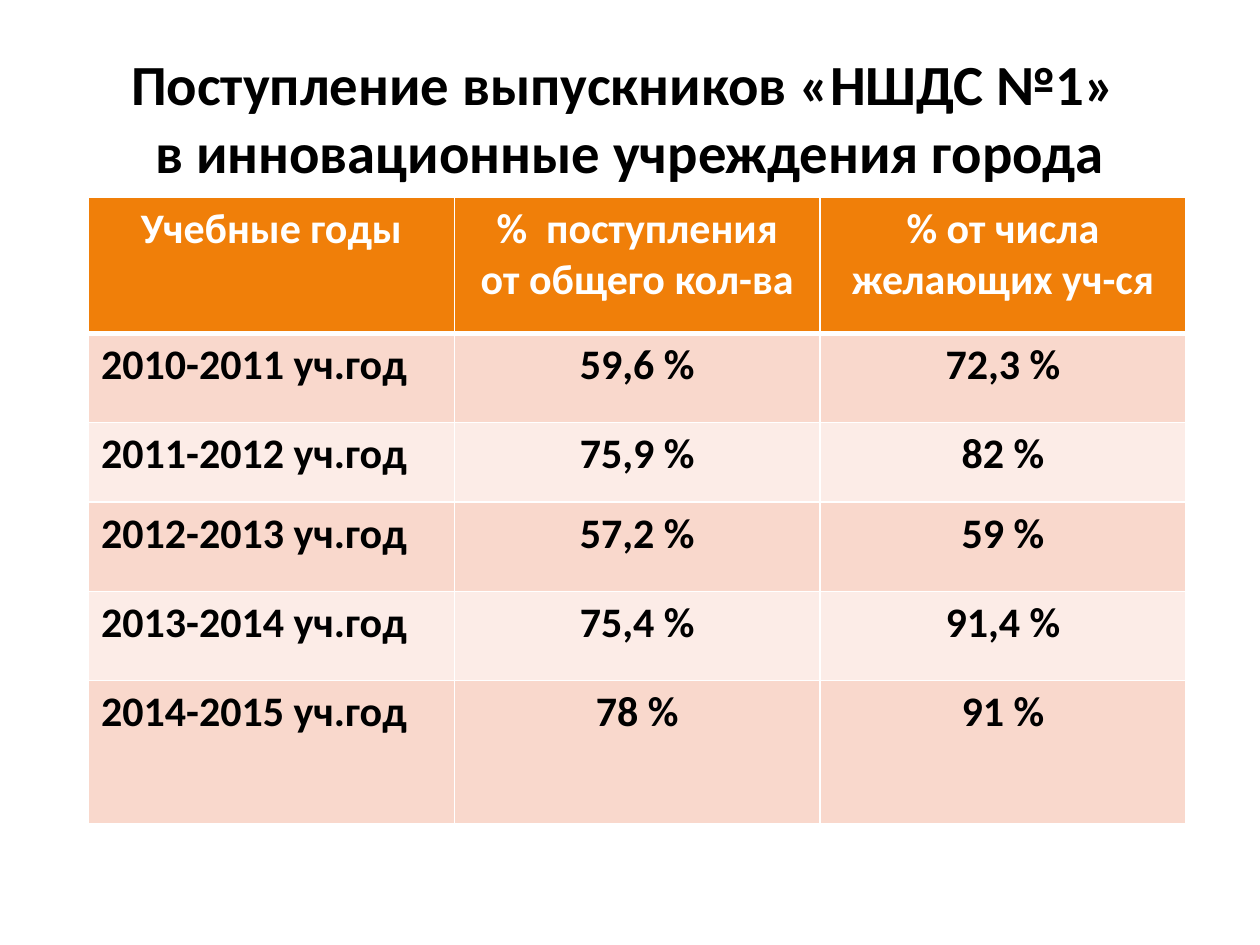
from lxml import etree
from pptx import Presentation
from pptx import util as u
from pptx.dml.color import RGBColor
from pptx.enum import text
from pptx.oxml import ns

ORANGE, ROSE, PALE_ROSE = "F07F09", "F9D8CC", "FCECE7"
WHITE, BLACK = "FFFFFF", "000000"


def colour(code):
    return RGBColor.from_string(code)


class SlideBuilder:
    font_name = "Calibri"

    def __init__(self, slide):
        self.slide = slide

    def style(self, paragraph, size, code, align):
        paragraph.alignment = align
        font = paragraph.font
        font.name, font.size, font.bold = self.font_name, u.Pt(size), True
        font.color.rgb = colour(code)

    def heading(self, wording, left, top, width, height, size):
        box = self.slide.shapes.add_textbox(
            u.Pt(left), u.Pt(top), u.Pt(width), u.Pt(height))
        frame = box.text_frame
        frame.word_wrap = True
        frame.vertical_anchor = text.MSO_ANCHOR.MIDDLE
        frame.text = wording
        self.style(frame.paragraphs[0], size, BLACK, text.PP_ALIGN.CENTER)

    def borders(self, cell, bottom):
        properties = cell._tc.get_or_add_tcPr()
        for side, width in (("L", 1), ("R", 1), ("T", 1), ("B", bottom)):
            line = etree.SubElement(properties, ns.qn(f"a:ln{side}"), w=str(u.Pt(width)))
            fill = etree.SubElement(line, ns.qn("a:solidFill"))
            etree.SubElement(fill, ns.qn("a:srgbClr"), val=WHITE)

    def cell(self, cell, wording, fill, code, align, bottom):
        self.borders(cell, bottom)
        cell.fill.solid()
        cell.fill.fore_color.rgb = colour(fill)
        cell.text_frame.text = wording
        for paragraph in cell.text_frame.paragraphs:
            self.style(paragraph, 24, code, align)

    def table(self, rows, left, top, column_width, heights):
        table = self.slide.shapes.add_table(
            len(rows), len(rows[0]), u.Pt(left), u.Pt(top),
            u.Pt(column_width * len(rows[0])), u.Pt(sum(heights))).table
        for column in table.columns:
            column.width = u.Pt(column_width)
        for r, (wordings, height) in enumerate(zip(rows, heights)):
            table.rows[r].height = u.Pt(height)
            header = r == 0
            fill = ORANGE if header else (PALE_ROSE, ROSE)[r % 2]
            for c, wording in enumerate(wordings):
                centred = header or c > 0
                self.cell(table.cell(r, c), wording, fill,
                          WHITE if header else BLACK,
                          text.PP_ALIGN.CENTER if centred else text.PP_ALIGN.LEFT,
                          3 if header else 1)


def main():
    deck = Presentation()
    deck.slide_width, deck.slide_height = u.Pt(720), u.Pt(540)
    builder = SlideBuilder(deck.slides.add_slide(deck.slide_layouts[6]))

    # Title
    builder.heading("Поступление выпускников «НШДС №1» \vв инновационные учреждения города",
                    36, 21.6, 648, 90, 32.4)

    # Admission rates by school year
    admissions = [
        ("2010-2011", "59,6", "72,3"),
        ("2011-2012", "75,9", "82"),
        ("2012-2013", "57,2", "59"),
        ("2013-2014", "75,4", "91,4"),
        ("2014-2015", "78", "91"),
    ]
    header = ("Учебные годы", "%  поступления\nот общего кол-ва",
              "% от числа желающих уч-ся")
    rows = [header] + [(f"{years} уч.год", f"{of_all} %", f"{of_applicants} %")
                       for years, of_all, of_applicants in admissions]
    builder.table(rows, 50.6, 112.5, 209, [78, 51, 45.5, 51, 51, 81.5])

    deck.save("out.pptx")


if __name__ == "__main__":
    main()
